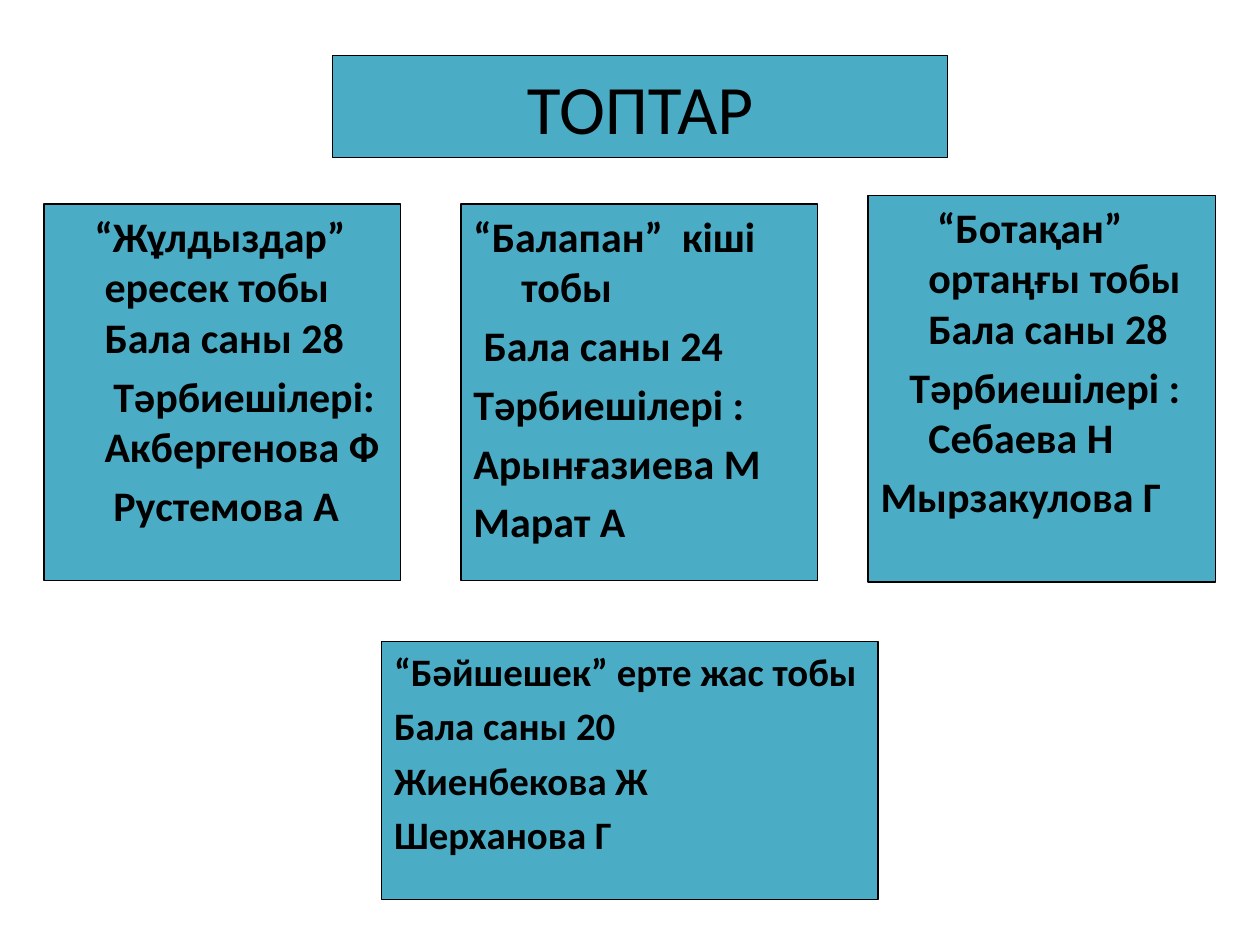
import pptx
import pptx.util
import pptx.dml.color
import pptx.enum.shapes
import pptx.enum.text
import pptx.oxml.ns
import lxml.etree

FILL, INK = "4BACC6", "000000"
HANG = 0.38  # left margin of wrapped lines, inches

TITLE = ("ТОПТАР", (2.64, 0.44, 4.88, 0.81), 39.6)

# Each group: place, text size, lines as (text, start of the first line in inches)
GROUPS = [
    ((0.35, 1.62, 2.83, 2.99), 24, [
        ("“Жұлдыздар” ересек тобы Бала саны 28", 0.3),
        ("Тәрбиешілері: Акбергенова Ф", 0.45),
        ("Рустемова А", 0.45)]),
    ((6.89, 1.55, 2.76, 3.07), 24, [
        ("“Ботақан” ортаңғы тобы Бала саны 28", 0.45),
        ("Тәрбиешілері : Себаева Н", 0.23),
        ("Мырзакулова Г", 0)]),
    ((3.03, 5.09, 3.94, 2.05), 22.2, [
        ("“Бәйшешек” ерте жас тобы", 0),
        ("Бала саны 20", 0),
        ("Жиенбекова Ж", 0),
        ("Шерханова Г", 0)]),
    ((3.66, 1.62, 2.83, 2.99), 24, [
        ("“Балапан”  кіші тобы", 0),
        ("Бала саны 24", 0.08),
        ("Тәрбиешілері :", 0),
        ("Арынғазиева М", 0),
        ("Марат А", 0)]),
]


def color(code):
    return pptx.dml.color.RGBColor.from_string(code)


def frame(shape, place, anchor):
    """Place and paint a box, and return its text frame."""
    shape.left, shape.top, shape.width, shape.height = map(pptx.util.Inches, place)
    shape.fill.solid()
    shape.fill.fore_color.rgb = color(FILL)
    shape.line.color.rgb = color(INK)
    shape.line.width = pptx.util.Pt(0.75)
    text = shape.text_frame
    text.word_wrap = True
    text.auto_size = pptx.enum.text.MSO_AUTO_SIZE.NONE
    text.vertical_anchor = anchor
    return text


def style(para, size, bold, align):
    para.alignment = align
    for run in para.runs:
        font = run.font
        font.name, font.size, font.bold = "Calibri", pptx.util.Pt(size), bold
        font.color.rgb = color(INK)


def write(text, size, lines):
    for i, (line, start) in enumerate(lines):
        para = text.paragraphs[0] if i == 0 else text.add_paragraph()
        para.text = line
        props = para._p.get_or_add_pPr()
        props.set("marL", str(pptx.util.Inches(HANG)))
        props.set("indent", str(pptx.util.Inches(start - HANG)))
        lxml.etree.SubElement(props, pptx.oxml.ns.qn("a:buNone"))
        para.space_before = pptx.util.Pt(0.2 * size if i else 0)
        style(para, size, True, pptx.enum.text.PP_ALIGN.LEFT)


def main():
    deck = pptx.Presentation()
    deck.slide_width = pptx.util.Inches(10)
    deck.slide_height = pptx.util.Inches(7.5)
    slide = deck.slides.add_slide(deck.slide_layouts[1])
    anchor = pptx.enum.text.MSO_ANCHOR

    name, place, size = TITLE
    text = frame(slide.shapes.title, place, anchor.MIDDLE)
    text.text = name
    style(text.paragraphs[0], size, False, pptx.enum.text.PP_ALIGN.CENTER)

    for i, (place, size, lines) in enumerate(GROUPS):
        if i == 0:
            box = slide.placeholders[1]
        else:
            box = slide.shapes.add_shape(
                pptx.enum.shapes.MSO_SHAPE.RECTANGLE, 0, 0, 0, 0)
            box.shadow.inherit = False
        write(frame(box, place, anchor.TOP), size, lines)

    deck.save("out.pptx")


if __name__ == "__main__":
    main()
